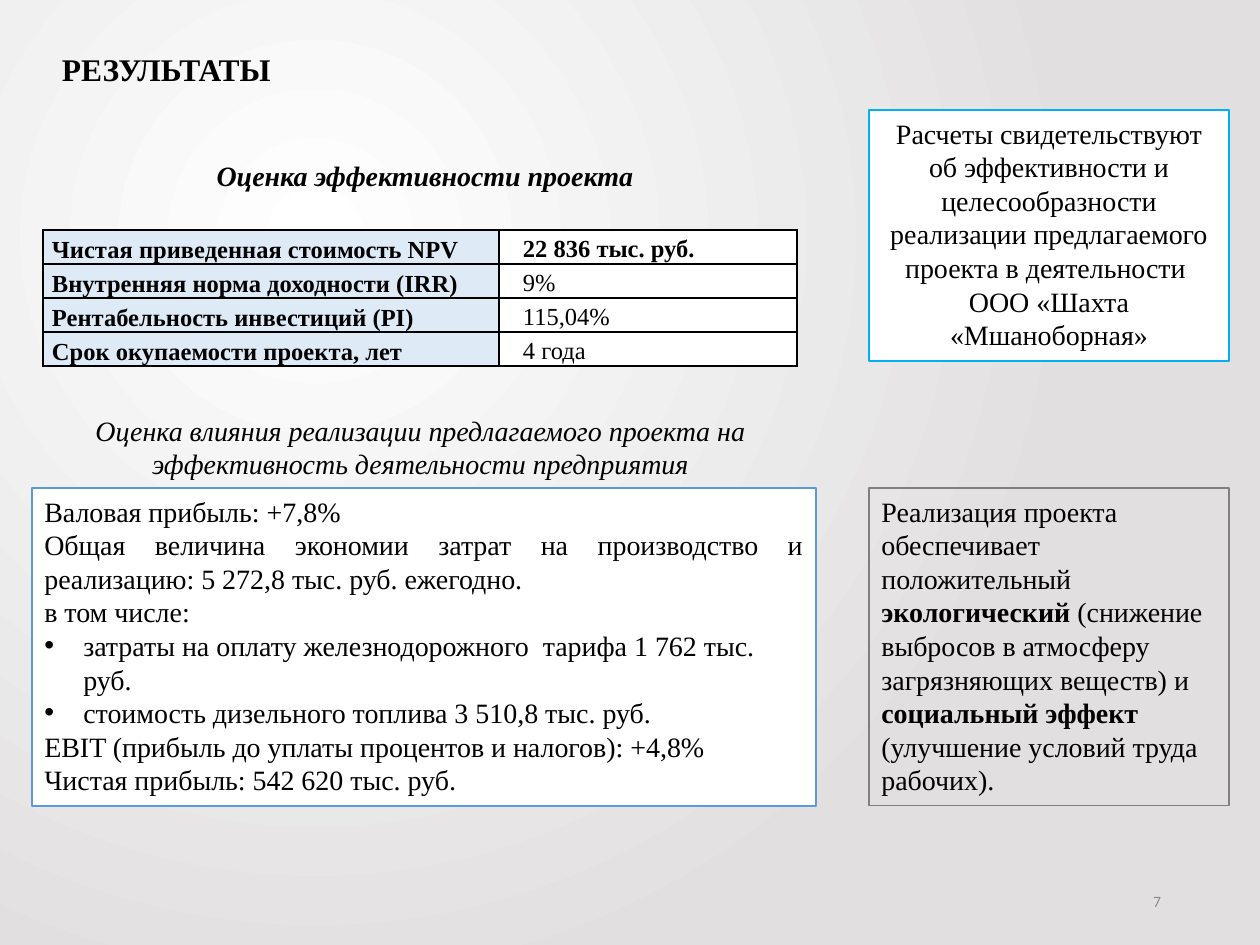
from dataclasses import dataclass

from lxml.etree import SubElement
from pptx import Presentation
from pptx.dml.color import RGBColor
from pptx.enum.shapes import MSO_SHAPE
from pptx.enum.text import MSO_ANCHOR, MSO_AUTO_SIZE, PP_ALIGN
from pptx.oxml.ns import qn
from pptx.util import Pt

EMU_PER_PX = 914400 / 126
SERIF = "Times New Roman"
BLACK, WHITE, LABEL_FILL = "000000", "FFFFFF", "DEEBF7"


@dataclass
class Box:
    left: int
    top: int
    width: int
    height: int
    fill: str | None = None
    line: str | None = None
    line_width: float = 1


@dataclass
class Line:
    text: str  # ** switches bold on and off
    align: PP_ALIGN = PP_ALIGN.LEFT
    bullet: bool = False


@dataclass
class Indicator:
    label: str
    value: str
    bold: bool = False


def px(length: int) -> int:
    return round(length * EMU_PER_PX)


def color(value: str) -> RGBColor:
    return RGBColor.from_string(value)


def write(paragraph, text: str, *, size=16, font=SERIF, ink=BLACK, bold=False,
          italic=False, align=PP_ALIGN.LEFT, spacing=None, indent=0, bullet=False):
    paragraph.alignment = align
    paragraph.line_spacing = spacing
    properties = paragraph._p.get_or_add_pPr()
    if bullet:
        indent = 39
        properties.set("indent", str(-px(indent)))
        SubElement(properties, qn("a:buFont")).set("typeface", "Arial")
        SubElement(properties, qn("a:buChar")).set("char", "•")
    if indent:
        properties.set("marL", str(px(indent)))
    for index, part in enumerate(text.split("**")):
        run = paragraph.add_run()
        run.text = part
        run.font.size = Pt(size)
        run.font.name = font
        run.font.bold = bold or index % 2 == 1
        run.font.italic = italic
        run.font.color.rgb = color(ink)


def add_text(slide, box: Box, text: str, *, anchor=MSO_ANCHOR.TOP, side_margin=13, **style):
    place = [px(n) for n in (box.left, box.top, box.width, box.height)]
    frame = slide.shapes.add_textbox(*place).text_frame
    frame.word_wrap = True
    frame.vertical_anchor = anchor
    frame.margin_left = frame.margin_right = px(side_margin)
    write(frame.paragraphs[0], text, **style)


def add_panel(slide, box: Box, lines: list[Line]):
    place = [px(n) for n in (box.left, box.top, box.width, box.height)]
    shape = slide.shapes.add_shape(MSO_SHAPE.RECTANGLE, *place)
    shape.shadow.inherit = False
    if box.fill:
        shape.fill.solid()
        shape.fill.fore_color.rgb = color(box.fill)
    else:
        shape.fill.background()
    shape.line.color.rgb = color(box.line)
    shape.line.width = Pt(box.line_width)
    frame = shape.text_frame
    frame.word_wrap = True
    frame.auto_size = MSO_AUTO_SIZE.SHAPE_TO_FIT_TEXT
    frame.vertical_anchor = MSO_ANCHOR.TOP
    for index, line in enumerate(lines):
        paragraph = frame.add_paragraph() if index else frame.paragraphs[0]
        write(paragraph, line.text, align=line.align, bullet=line.bullet)


def format_cell(cell, text: str, fill: str, anchor: MSO_ANCHOR, **style):
    cell.margin_left = cell.margin_right = px(9)
    cell.margin_top = cell.margin_bottom = 0
    cell.vertical_anchor = anchor
    properties = cell._tc.get_or_add_tcPr()
    for side in ("a:lnL", "a:lnR", "a:lnT", "a:lnB"):
        border = SubElement(properties, qn(side), w=str(Pt(1)))
        solid = SubElement(border, qn("a:solidFill"))
        SubElement(solid, qn("a:srgbClr"), val=BLACK)
    cell.fill.solid()
    cell.fill.fore_color.rgb = color(fill)
    write(cell.text_frame.paragraphs[0], text, size=14, spacing=1.15, **style)


def add_indicators(slide, left: int, top: int, columns: list[int],
                   row_height: int, indicators: list[Indicator]):
    table = slide.shapes.add_table(len(indicators), len(columns), px(left), px(top),
                                   px(sum(columns)), px(row_height * len(indicators))).table
    table.first_row = table.horz_banding = False
    for column, width in zip(table.columns, columns):
        column.width = px(width)
    for row, item in zip(table.rows, indicators):
        row.height = px(row_height)
        label, value = row.cells
        format_cell(label, item.label, LABEL_FILL, MSO_ANCHOR.BOTTOM, bold=True)
        format_cell(value, item.value, WHITE, MSO_ANCHOR.MIDDLE, bold=item.bold, indent=15)


def set_background(slide, center: str, edge: str):
    fill = slide.background.fill
    fill.gradient()
    for stop, value, position in zip(fill.gradient_stops, (center, edge), (0, 1)):
        stop.color.rgb = color(value)
        stop.position = position
    gradient = slide.element.find(".//" + qn("a:gradFill"))
    gradient.remove(gradient.find(qn("a:lin")))
    circle = SubElement(gradient, qn("a:path"), path="circle")
    SubElement(circle, qn("a:fillToRect"), l="50000", t="50000", r="100000", b="100000")


def main():
    presentation = Presentation()
    presentation.slide_width, presentation.slide_height = px(1260), px(945)
    slide = presentation.slides.add_slide(presentation.slide_layouts[6])
    set_background(slide, WHITE, "E1DFDF")

    # Page number and headings
    add_text(slide, Box(890, 876, 284, 50), "7", size=9, font="Calibri", ink="8C8C8C",
             align=PP_ALIGN.RIGHT, anchor=MSO_ANCHOR.MIDDLE)
    add_text(slide, Box(62, 44, 1124, 50), "РЕЗУЛЬТАТЫ", size=18, bold=True, side_margin=0)
    add_text(slide, Box(33, 152, 784, 47), "Оценка эффективности проекта",
             bold=True, italic=True, align=PP_ALIGN.CENTER)
    add_text(slide, Box(25, 407, 791, 81),
             "Оценка влияния реализации предлагаемого проекта на "
             "эффективность деятельности предприятия",
             italic=True, align=PP_ALIGN.CENTER)

    # Project indicators
    add_indicators(slide, 43, 230, [456, 298], 34, [
        Indicator("Чистая приведенная стоимость NPV", "22 836 тыс. руб.", bold=True),
        Indicator("Внутренняя норма доходности (IRR)", "9%"),
        Indicator("Рентабельность инвестиций (PI)", "115,04%"),
        Indicator("Срок окупаемости проекта, лет", "4 года"),
    ])

    # Conclusion, financial effect, environmental and social effect
    add_panel(slide, Box(869, 110, 360, 251, WHITE, "00B0F0"), [
        Line("Расчеты свидетельствуют об эффективности и целесообразности "
             "реализации предлагаемого проекта в деятельности ", PP_ALIGN.CENTER),
        Line("ООО «Шахта «Мшаноборная»", PP_ALIGN.CENTER),
    ])
    add_panel(slide, Box(32, 488, 784, 318, WHITE, "5B9BD5"), [
        Line("Валовая прибыль: +7,8%"),
        Line("Общая величина экономии затрат на производство и реализацию: "
             "5 272,8 тыс. руб. ежегодно.", PP_ALIGN.JUSTIFY),
        Line("в том числе:"),
        Line("затраты на оплату железнодорожного  тарифа 1 762 тыс. руб.", bullet=True),
        Line("стоимость дизельного топлива 3 510,8 тыс. руб.", bullet=True),
        Line("EBIT (прибыль до уплаты процентов и налогов): +4,8%"),
        Line("Чистая прибыль: 542 620 тыс. руб."),
    ])
    add_panel(slide, Box(869, 488, 360, 318, line="7F7F7F", line_width=0.75), [
        Line("Реализация проекта обеспечивает положительный **экологический** "
             "(снижение выбросов в атмосферу загрязняющих веществ) и "
             "**социальный эффект** (улучшение условий труда рабочих)."),
    ])

    presentation.save("out.pptx")


if __name__ == "__main__":
    main()
